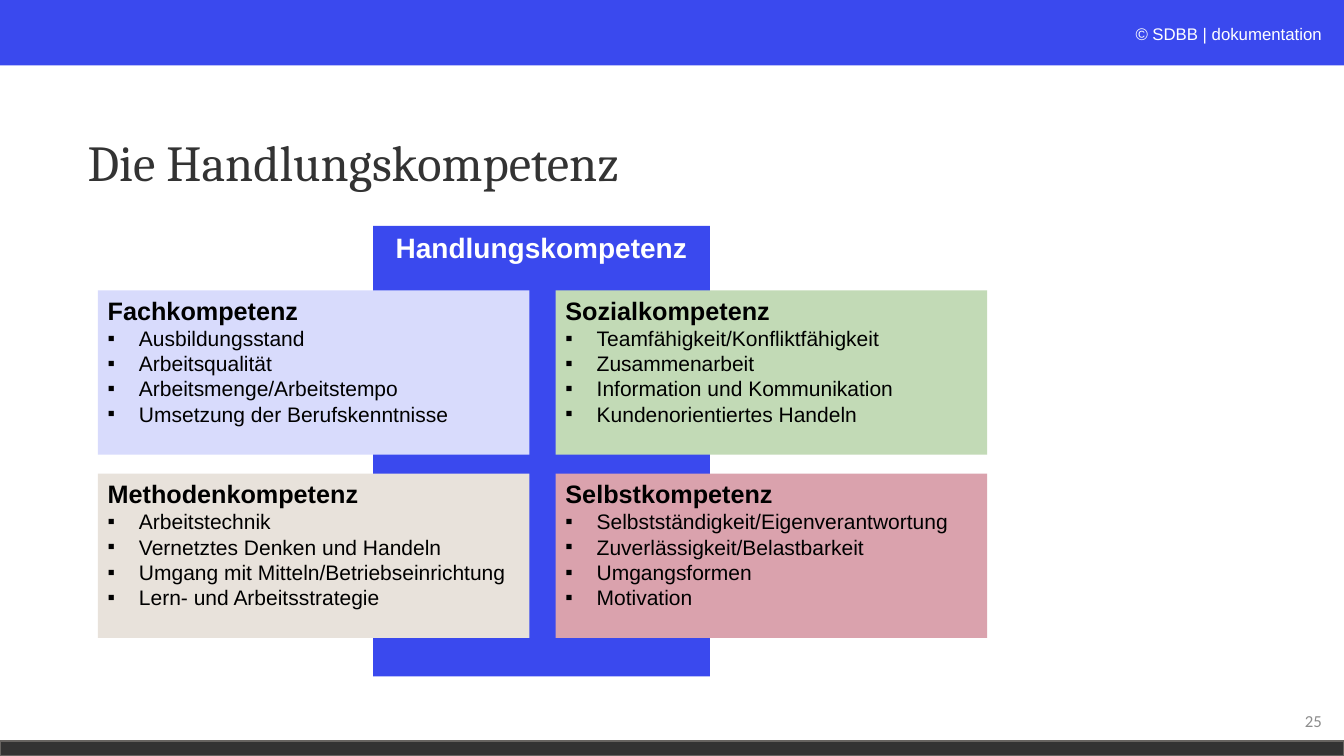
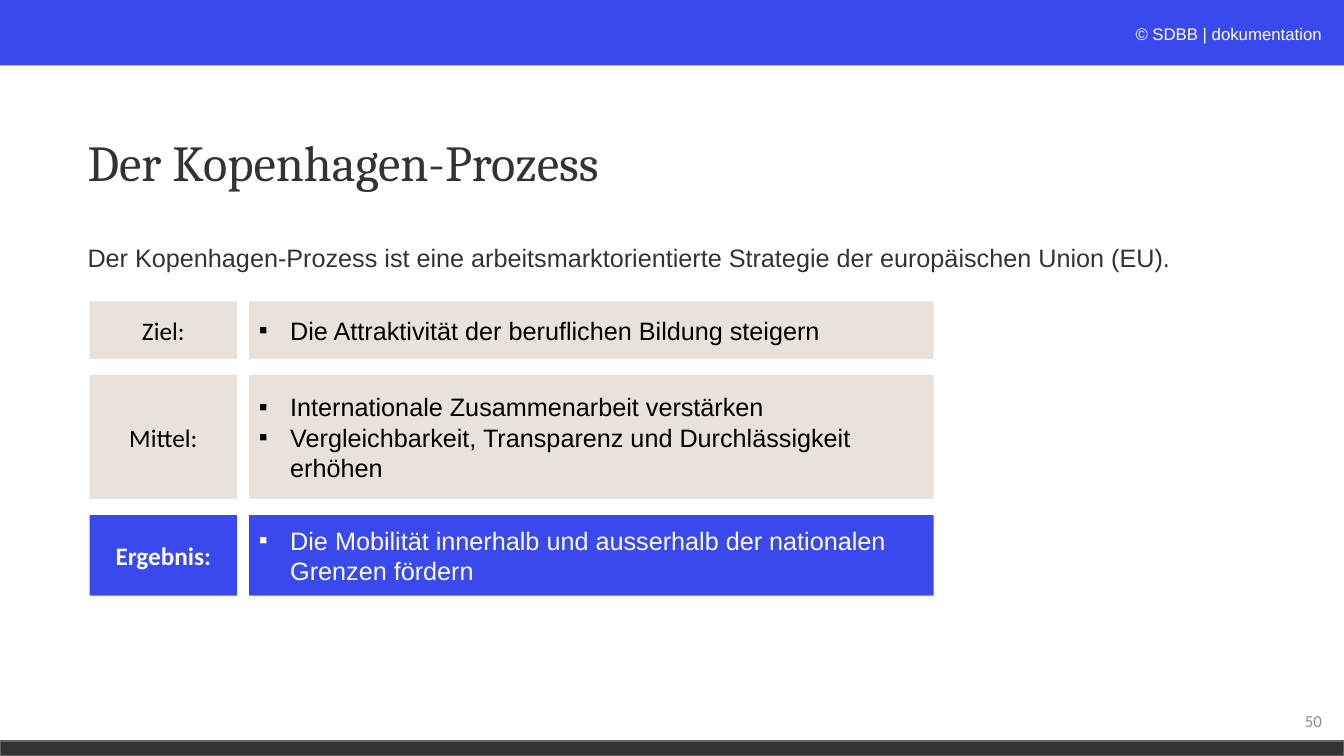
from pptx import Presentation
from pptx import util as u
from pptx.dml.color import RGBColor
from pptx.enum import shapes, text
from pptx.oxml.ns import qn
from lxml import etree

HUES = {
    "blue": "3A49EE", "dark": "333333", "edge": "666360", "white": "FFFFFF",
    "pearl": "FCFDFE", "grey": "8C8C8C", "black": "000000",
    "lilac": "D8DBFC", "sand": "E8E2DB", "green": "C2DAB6", "rose": "DAA2AD",
}
WIDE, HIGH = 13.33, 7.5
LEFT, MID, RIGHT = text.PP_ALIGN.LEFT, text.PP_ALIGN.CENTER, text.PP_ALIGN.RIGHT
TOP, CENTER = text.MSO_ANCHOR.TOP, text.MSO_ANCHOR.MIDDLE


def hue(name):
    return RGBColor.from_string(HUES[name])


def inches(*sizes):
    return [u.Inches(size) for size in sizes]


class Deck:
    """Holds the shared style and the slide being filled."""

    def __init__(self):
        self.prs = Presentation()
        self.prs.slide_width, self.prs.slide_height = inches(WIDE, HIGH)
        self.slide = None

    def start(self, title, number):
        """Open a slide with its bands, copyright line, number and title."""
        self.slide = self.prs.slides.add_slide(self.prs.slide_layouts[5])
        self.rect((0, 0, WIDE, 0.65), "blue")
        self.rect((0, 7.35, WIDE, 0.15), "dark", "edge")
        mark = self.label((8.62, 0.19, 4.59, 0.3), "© ", 12, "pearl", align=RIGHT)
        mark.runs[0].font.italic = True
        mark.add_run().text = "SDBB | dokumentation"
        self.style(mark.runs[1], 12, "white")
        self.label((10.21, 6.95, 3, 0.4), str(number), 12, "grey", "Calibri",
                   RIGHT, CENTER)
        self.title(title)

    def title(self, words):
        head = self.slide.shapes.title
        head.left, head.top, head.width, head.height = inches(0.77, 0.91, 8.82, 1.45)
        frame = head.text_frame
        frame.text = words
        frame.vertical_anchor = CENTER
        para = frame.paragraphs[0]
        para.line_spacing = 0.9
        self.format(para, 36, "dark", "Cambria")

    def rect(self, box, fill, line=None):
        shape = self.slide.shapes.add_shape(
            shapes.MSO_SHAPE.RECTANGLE, *inches(*box))
        shape.shadow.inherit = False
        shape.fill.solid()
        shape.fill.fore_color.rgb = hue(fill)
        if line:
            shape.line.color.rgb = hue(line)
            shape.line.width = u.Pt(1)
        else:
            shape.line.fill.background()
        return shape

    def label(self, box, words, size, color, face="Arial", align=LEFT, anchor=TOP):
        """Add a one-paragraph text box and return its paragraph."""
        frame = self.slide.shapes.add_textbox(*inches(*box)).text_frame
        frame.word_wrap = True
        frame.vertical_anchor = anchor
        frame.text = words
        self.format(frame.paragraphs[0], size, color, face, align)
        return frame.paragraphs[0]

    def panel(self, box, fill, lines, anchor=CENTER):
        """Add a filled box and return the paragraphs of its text."""
        frame = self.rect(box, fill).text_frame
        frame.word_wrap = True
        frame.vertical_anchor = anchor
        frame.text = "\n".join(lines)
        return frame.paragraphs

    def bullet(self, para, size, color):
        props = para._p.get_or_add_pPr()
        indent = u.Inches(0.31)
        props.set("marL", str(indent))
        props.set("indent", str(-indent))
        etree.SubElement(props, qn("a:buFont")).set("typeface", "Arial")
        etree.SubElement(props, qn("a:buChar")).set("char", "▪")
        self.format(para, size, color)

    def format(self, para, size, color, face="Arial", align=LEFT, bold=False):
        para.alignment = align
        for run in para.runs:
            self.style(run, size, color, face, bold)

    def style(self, run, size, color, face="Arial", bold=False):
        font = run.font
        font.size, font.name, font.bold = u.Pt(size), face, bold
        font.color.rgb = hue(color)


def skills(deck):
    deck.start("Die Handlungskompetenz", 25)
    head = deck.panel((3.7, 2.24, 3.34, 4.47), "blue", ["Handlungskompetenz"], TOP)
    deck.format(head[0], 20, "white", align=MID, bold=True)
    cards = [
        ("lilac", "Fachkompetenz", "Ausbildungsstand", "Arbeitsqualität",
         "Arbeitsmenge/Arbeitstempo", "Umsetzung der Berufskenntnisse"),
        ("green", "Sozialkompetenz", "Teamfähigkeit/Konfliktfähigkeit",
         "Zusammenarbeit", "Information und Kommunikation",
         "Kundenorientiertes Handeln"),
        ("sand", "Methodenkompetenz", "Arbeitstechnik",
         "Vernetztes Denken und Handeln",
         "Umgang mit Mitteln/Betriebseinrichtung", "Lern- und Arbeitsstrategie"),
        ("rose", "Selbstkompetenz", "Selbstständigkeit/Eigenverantwortung",
         "Zuverlässigkeit/Belastbarkeit", "Umgangsformen", "Motivation"),
    ]
    for i, (fill, *lines) in enumerate(cards):
        row, col = divmod(i, 2)
        box = (0.97 + col * 4.54, 2.88 + row * 1.82, 4.28, 1.63)
        name, *items = deck.panel(box, fill, lines, TOP)
        deck.format(name, 18, "black", bold=True)
        for item in items:
            deck.bullet(item, 15, "black")


def process(deck):
    deck.start("Der Kopenhagen-Prozess", 50)
    intro = deck.label(
        (0.77, 2.39, 11.5, 0.5),
        "Der Kopenhagen-Prozess ist eine arbeitsmarktorientierte Strategie "
        "der europäischen Union (EU).", 18, "dark")
    intro.line_spacing = 0.9
    rows = [
        (0.57, "sand", "black", "Ziel:",
         ["Die Attraktivität der beruflichen Bildung steigern"]),
        (1.23, "sand", "black", "Mittel:",
         ["Internationale Zusammenarbeit verstärken",
          "Vergleichbarkeit, Transparenz und Durchlässigkeit erhöhen"]),
        (0.8, "blue", "white", "Ergebnis:",
         ["Die Mobilität innerhalb und ausserhalb der nationalen Grenzen fördern"]),
    ]
    top, gap = 2.99, 0.16
    for high, fill, color, name, lines in rows:
        tag = deck.panel((0.89, top, 1.46, high), fill, [name])
        deck.format(tag[0], 18, color, "Calibri", MID, fill == "blue")
        for item in deck.panel((2.47, top, 6.79, high), fill, lines):
            deck.bullet(item, 18, color)
        top += high + gap


def main():
    deck = Deck()
    skills(deck)
    process(deck)
    deck.prs.save("out.pptx")


if __name__ == "__main__":
    main()
